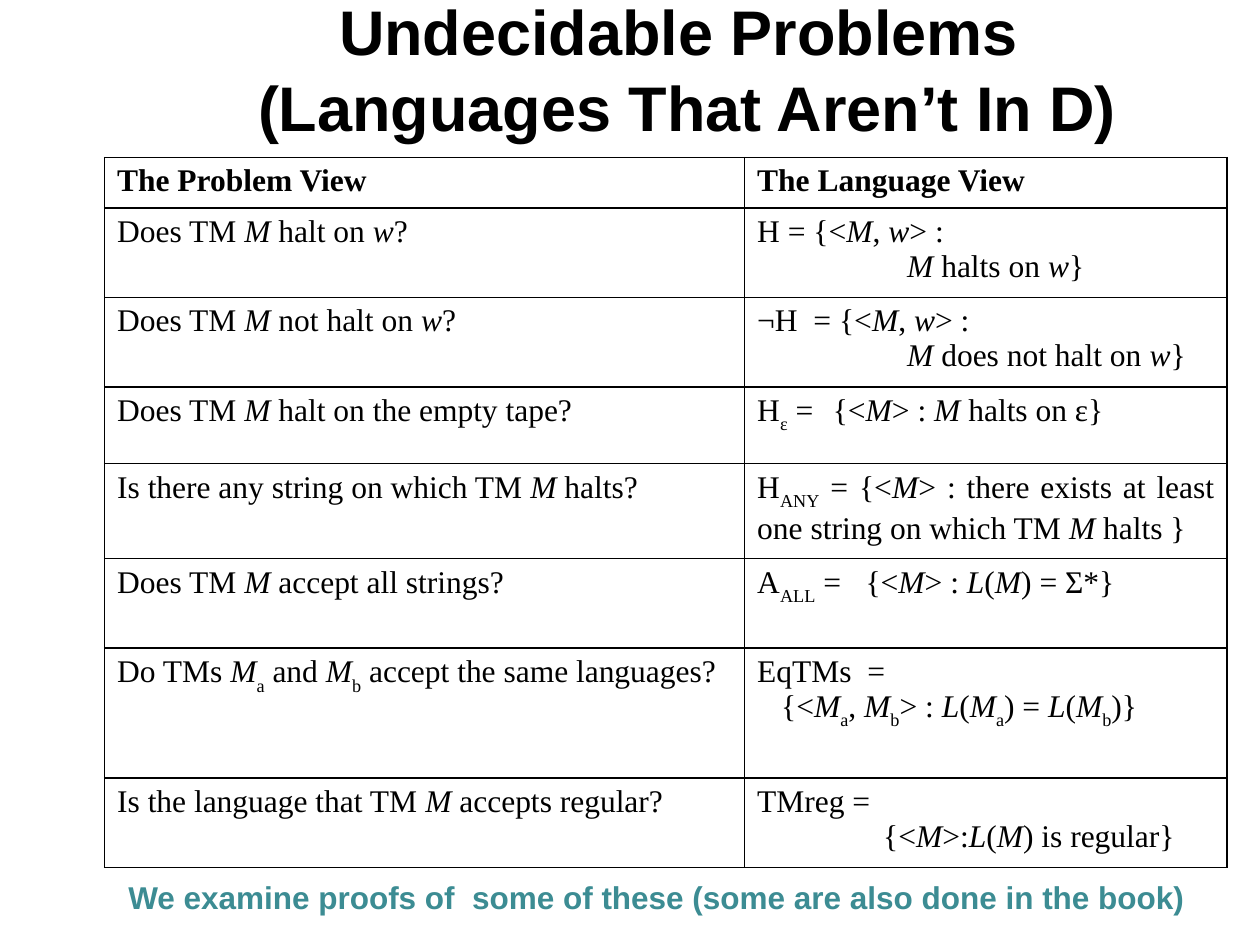
"""Build a slide listing undecidable problems and their languages."""
from lxml import etree
from pptx import Presentation
from pptx.dml.color import RGBColor
from pptx.enum.text import MSO_ANCHOR, PP_ALIGN
from pptx.oxml.ns import qn
from pptx.util import Inches, Pt

CENTER, JUSTIFY, LEFT = PP_ALIGN.CENTER, PP_ALIGN.JUSTIFY, PP_ALIGN.LEFT
MIDDLE, TOP = MSO_ANCHOR.MIDDLE, MSO_ANCHOR.TOP
BLACK, TEAL = "000000", "3C8C93"

TITLE = "Undecidable Problems \v(Languages That Aren’t In D)"
FOOTER = "We examine proofs of  some of these (some are also done in the book)"
HEADINGS = ("The Problem View", "The Language View")

# Underscores enclose italics, tildes enclose subscripts.
PROBLEMS = [
    {"problem": "Does TM _M_ halt on _w_?",
     "language": ["H = {<_M_, _w_> :", "_M_ halts on _w_}"], "indent": 1.19, "height": 0.71},
    {"problem": "Does TM _M_ not halt on _w_?",
     "language": ["¬H  = {<_M_, _w_> :", "_M_ does not halt on _w_}"],
     "indent": 1.19, "height": 0.71},
    {"problem": "Does TM _M_ halt on the empty tape?",
     "language": ["H~ε~ =\t{<_M_> : _M_ halts on ε}"], "tab": 0.6, "height": 0.61},
    {"problem": "Is there any string on which TM _M_ halts?",
     "language": ["H~ANY~ = {<_M_> : there exists at least one string on which TM _M_ halts }"],
     "height": 0.7},
    {"problem": "Does TM _M_ accept all strings?",
     "language": ["A~ALL~ =\t{<_M_> : _L_(_M_) = Σ*}"], "tab": 0.86, "height": 0.71},
    {"problem": "Do TMs _M_~a~ and _M_~b~ accept the same languages?",
     "language": ["EqTMs  =", "{<_M_~a~, _M_~b~> : _L_(_M_~a~) = _L_(_M_~b~)}"],
     "indent": 0.19, "height": 1.03},
    {"problem": "Is the language that TM _M_ accepts regular?",
     "language": ["TMreg =", "{<_M_>:_L_(_M_) is regular}"], "indent": 1, "height": 0.71},
]
COLUMN_WIDTHS = (5.08, 3.83)
HEADING_HEIGHT = 0.4


def color(value):
    return RGBColor.from_string(value)


def set_font(font, hue=BLACK, **values):
    for name, value in values.items():
        setattr(font, name, value)
    font.color.rgb = color(hue)


def add_label(page, text, place, align, anchor, size, hue):
    box = page.shapes.add_textbox(*map(Inches, place))
    frame = box.text_frame
    frame.word_wrap = True
    frame.vertical_anchor = anchor
    para = frame.paragraphs[0]
    para.text = text
    para.alignment = align
    for span in para.runs:
        set_font(span.font, hue, name="Arial", size=Pt(size), bold=True)


def add_marked_text(para, text, bold):
    for i, italic_part in enumerate(text.split("_")):
        for j, part in enumerate(italic_part.split("~")):
            if part:
                span = para.add_run()
                span.text = part
                set_font(span.font, name="Times New Roman", size=Pt(18),
                         bold=bold, italic=i % 2 == 1)
                if j % 2:
                    span.font._element.set("baseline", "-30000")


def add_border(cell):
    properties = cell._tc.get_or_add_tcPr()
    for side in ("lnL", "lnR", "lnT", "lnB"):
        line = etree.SubElement(properties, qn(f"a:{side}"), w=str(Pt(1)))
        fill = etree.SubElement(line, qn("a:solidFill"))
        etree.SubElement(fill, qn("a:srgbClr"), val=BLACK)


def fill_cell(cell, lines, bold=False, indent=0, tab=None):
    add_border(cell)
    cell.fill.background()
    for number, text in enumerate(lines):
        frame = cell.text_frame
        para = frame.add_paragraph() if number else frame.paragraphs[0]
        para.alignment = LEFT if tab else JUSTIFY
        properties = para._p.get_or_add_pPr()
        if number and indent:
            properties.set("marL", str(Inches(indent)))
        if tab:
            stops = etree.SubElement(properties, qn("a:tabLst"))
            etree.SubElement(stops, qn("a:tab"), pos=str(Inches(tab)), algn="l")
        add_marked_text(para, text, bold)


def add_problem_table(page):
    heights = [HEADING_HEIGHT] + [row["height"] for row in PROBLEMS]
    place = (0.83, 1.25, sum(COLUMN_WIDTHS), sum(heights))
    table = page.shapes.add_table(len(heights), 2, *map(Inches, place)).table
    table.first_row = table.horz_banding = False
    for column, width in zip(table.columns, COLUMN_WIDTHS):
        column.width = Inches(width)
    for row, height in zip(table.rows, heights):
        row.height = Inches(height)
    for column, heading in enumerate(HEADINGS):
        fill_cell(table.cell(0, column), [heading], bold=True)
    for number, row in enumerate(PROBLEMS, 1):
        fill_cell(table.cell(number, 0), [row["problem"]])
        fill_cell(table.cell(number, 1), row["language"],
                  indent=row.get("indent", 0), tab=row.get("tab"))


def main():
    deck = Presentation()
    deck.slide_width, deck.slide_height = Inches(10), Inches(7.5)
    page = deck.slides.add_slide(deck.slide_layouts[6])
    add_label(page, TITLE, (0.83, 0.08, 9.25, 0.92), CENTER, MIDDLE, 36, BLACK)
    add_problem_table(page)
    add_label(page, FOOTER, (0.92, 6.92, 9.17, 0.71), LEFT, TOP, 18, TEAL)
    deck.save("out.pptx")


if __name__ == "__main__":
    main()
